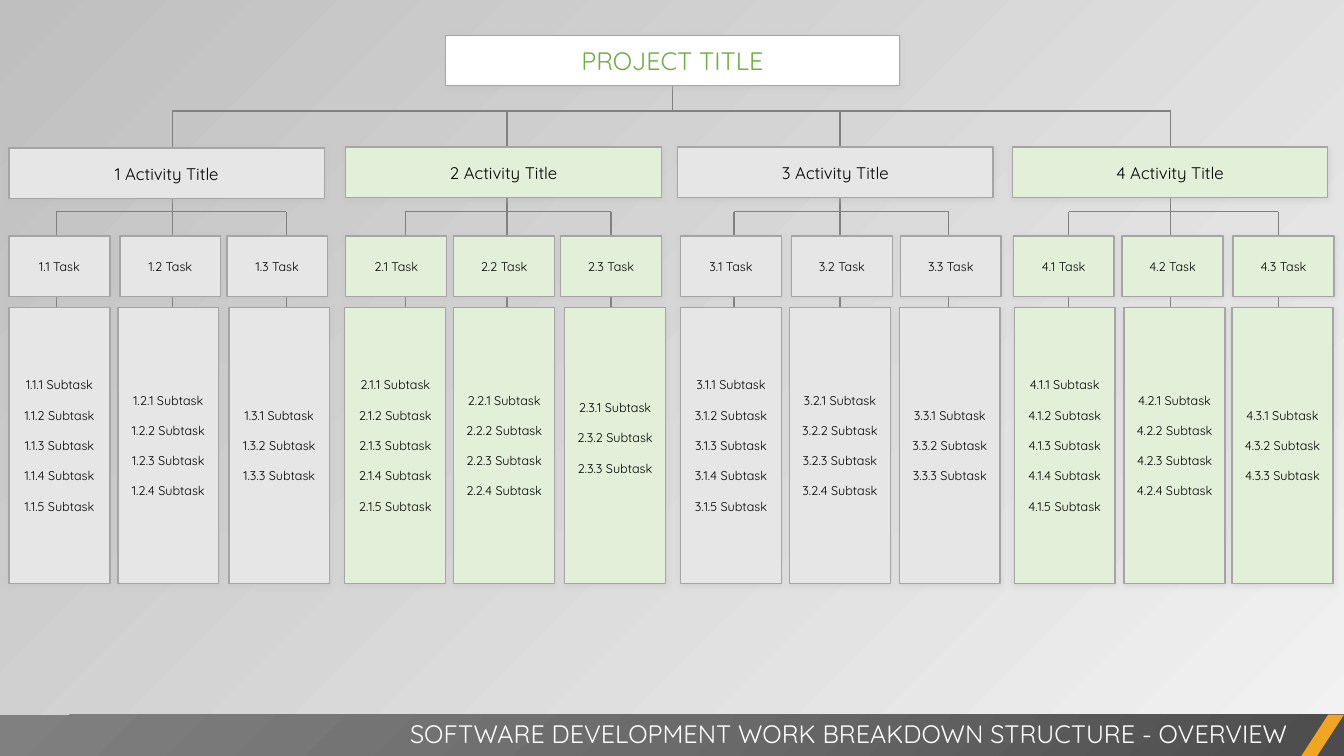
"""Build a work breakdown structure slide for a software project."""
from dataclasses import dataclass

from lxml import etree
from pptx import Presentation
from pptx.dml.color import RGBColor
from pptx.enum.shapes import MSO_CONNECTOR, MSO_SHAPE
from pptx.enum.text import MSO_ANCHOR, MSO_AUTO_SIZE, PP_ALIGN
from pptx.oxml import parse_xml
from pptx.oxml.ns import nsdecls, qn
from pptx.util import Pt

PX = 9144
RECTANGLE, PARALLELOGRAM = MSO_SHAPE.RECTANGLE, MSO_SHAPE.PARALLELOGRAM
STRAIGHT = MSO_CONNECTOR.STRAIGHT
TOP, MIDDLE = MSO_ANCHOR.TOP, MSO_ANCHOR.MIDDLE
CENTER, RIGHT = PP_ALIGN.CENTER, PP_ALIGN.RIGHT
NO_AUTOFIT = MSO_AUTO_SIZE.NONE

SLIDE_WIDTH, SLIDE_HEIGHT = 1333, 750
TRUNK_TOP, BRANCH_TOP, DROP_BOTTOM = 110, 210, 333
TASK_TOP, SUBTASK_TOP = 234, 305
TASK_WIDTH, TASK_HEIGHT, SUBTASK_HEIGHT = 100, 60, 274
BAND_TOP, BAND_HEIGHT = 709, 42


@dataclass(frozen=True)
class Theme:
    """Colours, font and type sizes of the slide."""

    font: str = "Quicksand"
    heading_size: float = 18
    activity_size: float = 12
    task_size: float = 9
    subtask_gap: float = 10.8
    text: str = "000000"
    white: str = "FFFFFF"
    accent: str = "70AD47"
    gray: str = "E7E6E6"
    green: str = "E2F0D9"
    border: str = "A5A5A5"
    connector: str = "808080"
    shadow: str = "BFBFBF"
    stripe: str = "F0A622"
    background: tuple = ("F2F2F2", "BFBFBF")
    band: tuple = ("4C4C4C", "6B6B6B", "808080")


@dataclass(frozen=True)
class Activity:
    """Positions of one activity and its tasks, in px."""

    left: int
    top: int
    drops: tuple
    task_lefts: tuple
    subtask_lefts: tuple


THEME = Theme()
ACTIVITIES = (
    Activity(9, 147, (56, 171, 284), (9, 119, 225), (9, 117, 227)),
    Activity(343, 146, (402, 503, 606), (343, 450, 556), (342, 450, 560)),
    Activity(672, 146, (728, 833, 941), (675, 785, 893), (675, 783, 892)),
    Activity(1004, 146, (1060, 1161, 1268), (1005, 1113, 1223), (1006, 1115, 1222)),
)


def color(value):
    """Return the RGB colour of a hex string."""
    return RGBColor.from_string(value)


def write_text(shape, lines, size, font_color=THEME.text, align=CENTER, anchor=MIDDLE, gap=0):
    """Write lines as paragraphs with one format."""
    frame = shape.text_frame
    frame.word_wrap = True
    frame.vertical_anchor = anchor
    for index, line in enumerate(lines):
        paragraph = frame.add_paragraph() if index else frame.paragraphs[0]
        paragraph.alignment = align
        paragraph.space_before = Pt(gap if index else 0)
        run = paragraph.add_run()
        run.text = line
        run.font.name = THEME.font
        run.font.size = Pt(size)
        run.font.color.rgb = color(font_color)


def add_plain_shape(slide, kind, left, top, width, height, fill):
    """Add a filled shape without line or shadow."""
    shape = slide.shapes.add_shape(kind, left * PX, top * PX, width * PX, height * PX)
    shape.shadow.inherit = False
    shape.fill.solid()
    shape.fill.fore_color.rgb = color(fill)
    shape.line.fill.background()
    return shape


def add_box(slide, left, top, width, height, fill, lines, size, **text_format):
    """Add a bordered box with a soft shadow and text."""
    box = add_plain_shape(slide, RECTANGLE, left, top, width, height, fill)
    box.line.color.rgb = color(THEME.border)
    box.line.width = Pt(1)
    effects = box.element.spPr.find(qn("a:effectLst"))
    effects.append(parse_xml(
        f'<a:outerShdw {nsdecls("a")} blurRad="50800" dist="12700" dir="5400000">'
        f'<a:srgbClr val="{THEME.shadow}"><a:alpha val="40000"/></a:srgbClr></a:outerShdw>'
    ))
    write_text(box, lines, size, **text_format)
    return box


def add_line(slide, start_x, start_y, end_x, end_y):
    """Add a thin connector line."""
    line = slide.shapes.add_connector(
        STRAIGHT, start_x * PX, start_y * PX, end_x * PX, end_y * PX)
    line.line.color.rgb = color(THEME.connector)
    line.line.width = Pt(1)
    etree.SubElement(line.element.spPr, qn("a:effectLst"))


def add_tree_lines(slide):
    """Add the lines from the project down to the subtasks."""
    trunks = [activity.drops[1] for activity in ACTIVITIES]
    add_line(slide, 667, 59, 667, TRUNK_TOP)
    add_line(slide, trunks[0], TRUNK_TOP, trunks[-1], TRUNK_TOP)
    for activity in ACTIVITIES:
        first, trunk, last = activity.drops
        add_line(slide, first, BRANCH_TOP, last, BRANCH_TOP)
        for drop, top in ((first, BRANCH_TOP), (trunk, TRUNK_TOP), (last, BRANCH_TOP)):
            add_line(slide, drop, top, drop, DROP_BOTTOM)


def add_activity(slide, number, activity):
    """Add an activity box with its tasks and subtasks."""
    fill = THEME.gray if number % 2 else THEME.green
    add_box(slide, activity.left, activity.top, 313, 50, fill,
            [f"{number} Activity Title"], THEME.activity_size)
    columns = zip(activity.task_lefts, activity.subtask_lefts)
    for task, (task_left, subtask_left) in enumerate(columns, start=1):
        code = f"{number}.{task}"
        add_box(slide, task_left, TASK_TOP, TASK_WIDTH, TASK_HEIGHT, fill,
                [f"{code} Task"], THEME.task_size)
        subtasks = [f"{code}.{item} Subtask" for item in range(1, 7 - task)]
        box = add_box(slide, subtask_left, SUBTASK_TOP, TASK_WIDTH, SUBTASK_HEIGHT, fill,
                      subtasks, THEME.task_size, gap=THEME.subtask_gap)
        if code == "2.3":
            box.text_frame.margin_bottom = 20 * PX


def add_title_band(slide):
    """Add the bottom band and lay the slide title over it."""
    band = add_plain_shape(slide, RECTANGLE, 0, BAND_TOP, SLIDE_WIDTH, BAND_HEIGHT, THEME.band[0])
    stops = "".join(
        f'<a:gs pos="{index * 50000}"><a:srgbClr val="{value}"/></a:gs>'
        for index, value in enumerate(THEME.band))
    properties = band.element.spPr
    properties.replace(properties.find(qn("a:solidFill")), parse_xml(
        f'<a:gradFill {nsdecls("a")}><a:gsLst>{stops}</a:gsLst><a:path path="circle">'
        '<a:fillToRect l="100000" t="100000"/></a:path></a:gradFill>'
    ))
    stripe = add_plain_shape(slide, PARALLELOGRAM, 1290, BAND_TOP, 43, BAND_HEIGHT, THEME.stripe)
    stripe.adjustments[0] = 0.65
    title = slide.shapes.title
    title.left, title.top, title.width, title.height = 0, 708 * PX, 1287 * PX, 40 * PX
    title.text_frame.auto_size = NO_AUTOFIT
    write_text(title, ["SOFTWARE DEVELOPMENT WORK BREAKDOWN STRUCTURE - OVERVIEW"],
               THEME.heading_size, font_color=THEME.white, align=RIGHT, anchor=TOP)
    title.element.getparent().append(title.element)


def set_background(slide):
    """Fill the background with a diagonal gradient."""
    fill = slide.background.fill
    fill.gradient()
    fill.gradient_angle = 135
    for stop, value in zip(fill.gradient_stops, THEME.background):
        stop.color.rgb = color(value)


def main():
    """Build and save the presentation."""
    presentation = Presentation()
    presentation.slide_width = SLIDE_WIDTH * PX
    presentation.slide_height = SLIDE_HEIGHT * PX
    slide = presentation.slides.add_slide(presentation.slide_layouts[5])
    set_background(slide)
    add_tree_lines(slide)
    add_box(slide, 442, 35, 450, 50, THEME.white, ["PROJECT TITLE"],
            THEME.heading_size, font_color=THEME.accent)
    for number, activity in enumerate(ACTIVITIES, start=1):
        add_activity(slide, number, activity)
    add_title_band(slide)
    presentation.save("out.pptx")


if __name__ == "__main__":
    main()
